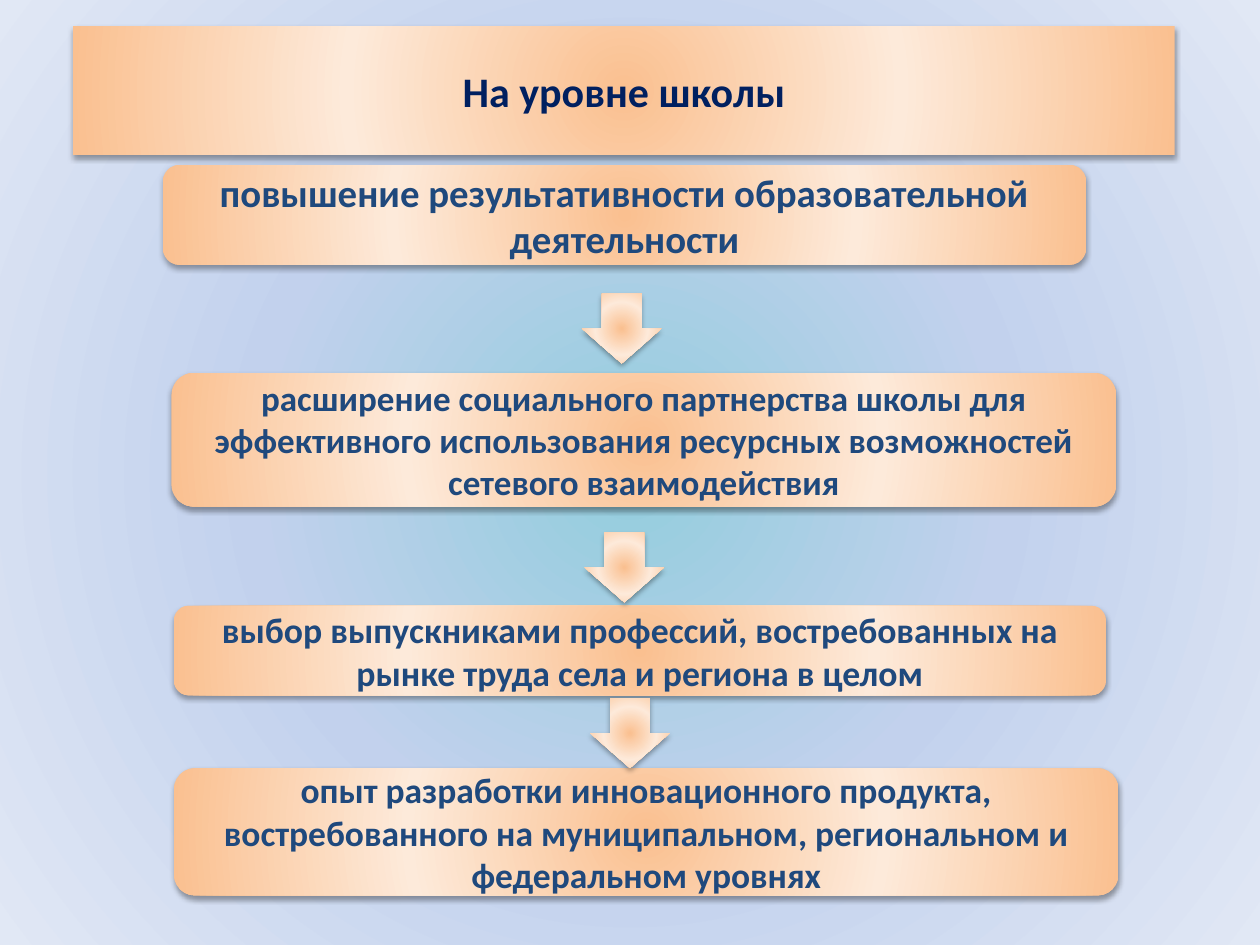
from dataclasses import dataclass

from lxml.etree import SubElement
from pptx import Presentation
from pptx.dml.color import RGBColor
from pptx.enum.shapes import MSO_SHAPE
from pptx.enum.text import MSO_ANCHOR, MSO_AUTO_SIZE, PP_ALIGN
from pptx.oxml import parse_xml
from pptx.oxml.ns import nsdecls, qn
from pptx.util import Pt


@dataclass(frozen=True)
class Theme:
    font: str = "Calibri"
    title_color: str = "002060"
    text_color: str = "1F497D"
    title_size: float = 24
    background: tuple = ((0, "93CDDD"), (48, "C2D1ED"), (100, "E1E8F5"))
    panel: tuple = ((0, "FAC090"), (50, "FDEADA"), (100, "FAC090"))


theme = Theme()


def paint(fill, parent, stops, shadow=None):
    """Give parent a circular gradient and, if a shadow is passed, a soft drop shadow."""
    fill.solid()
    gs = "".join(f'<a:gs pos="{pos * 1000}"><a:srgbClr val="{color}"/></a:gs>'
                 for pos, color in stops)
    gradient = parse_xml(
        f'<a:gradFill {nsdecls("a")} rotWithShape="1"><a:gsLst>{gs}</a:gsLst><a:path path="circle">'
        '<a:fillToRect l="50000" t="50000" r="50000" b="50000"/></a:path></a:gradFill>')
    parent.replace(parent.find(qn("a:solidFill")), gradient)
    if shadow is not None:
        shadow.inherit = False
        drop = SubElement(parent.find(qn("a:effectLst")), qn("a:outerShdw"),
                          blurRad=str(Pt(3.1)), dist=str(Pt(1.8)), dir="5400000", rotWithShape="0")
        color = SubElement(drop, qn("a:srgbClr"), val="000000")
        SubElement(color, qn("a:alpha"), val="35000")


def write(sp, text, size, color, space_before=0):
    tf = sp.text_frame
    tf.word_wrap = True
    tf.auto_size = MSO_AUTO_SIZE.NONE
    tf.vertical_anchor = MSO_ANCHOR.MIDDLE
    p = tf.paragraphs[0]
    p.alignment = PP_ALIGN.CENTER
    p.space_before = Pt(space_before)
    r = p.add_run()
    r.text = text
    r.font.name = theme.font
    r.font.size = Pt(size)
    r.font.bold = True
    r.font.color.rgb = RGBColor.from_string(color)


prs = Presentation()
prs.slide_width, prs.slide_height = Pt(720), Pt(540)
s = prs.slides.add_slide(prs.slide_layouts[5])
fill = s.background.fill
fill.solid()
paint(fill, s.element.find(".//" + qn("p:bgPr")), theme.background)

title = s.shapes.title
title.left, title.top, title.width, title.height = Pt(41.8), Pt(15), Pt(629.5), Pt(73.5)
adjustments = "".join(f'<a:gd name="adj{i}" fmla="val {value}"/>'
                      for i, value in enumerate((25000, 25700, 26500, 65700), 1))
title.element.spPr.append(parse_xml(
    f'<a:prstGeom {nsdecls("a")} prst="downArrowCallout"><a:avLst>{adjustments}</a:avLst></a:prstGeom>'))
paint(title.fill, title.element.spPr, theme.panel, title.shadow)
write(title, "На уровне школы", theme.title_size, theme.title_color)

# left, top, width, height, text size, text
steps = [
    (93, 94.3, 527.8, 57, 22.2, "повышение результативности образовательной деятельности"),
    (98, 213.2, 540, 76.3, 20, "расширение социального партнерства школы для эффективного "
     "использования ресурсных возможностей сетевого взаимодействия"),
    (99.3, 346.2, 532.8, 51.2, 20.4, "выбор выпускниками профессий, востребованных на рынке труда "
     "села и региона в целом"),
    (99.3, 439, 540, 72.7, 20.3, "опыт разработки инновационного продукта, востребованного на "
     "муниципальном, региональном и федеральном уровнях"),
]
for left, top, width, height, size, text in steps:
    sp = s.shapes.add_shape(MSO_SHAPE.ROUNDED_RECTANGLE, Pt(left), Pt(top), Pt(width), Pt(height))
    paint(sp.fill, sp.element.spPr, theme.panel, sp.shadow)
    sp.line.fill.background()
    write(sp, text, size, theme.text_color, space_before=size * 0.2)

for left, top in ((332.6, 167.8), (334.1, 304.3), (337.3, 399)):
    arrow = s.shapes.add_shape(MSO_SHAPE.DOWN_ARROW, Pt(left), Pt(top), Pt(45.4), Pt(39.9))
    paint(arrow.fill, arrow.element.spPr, theme.panel, arrow.shadow)
    arrow.line.fill.background()

prs.save("out.pptx")
